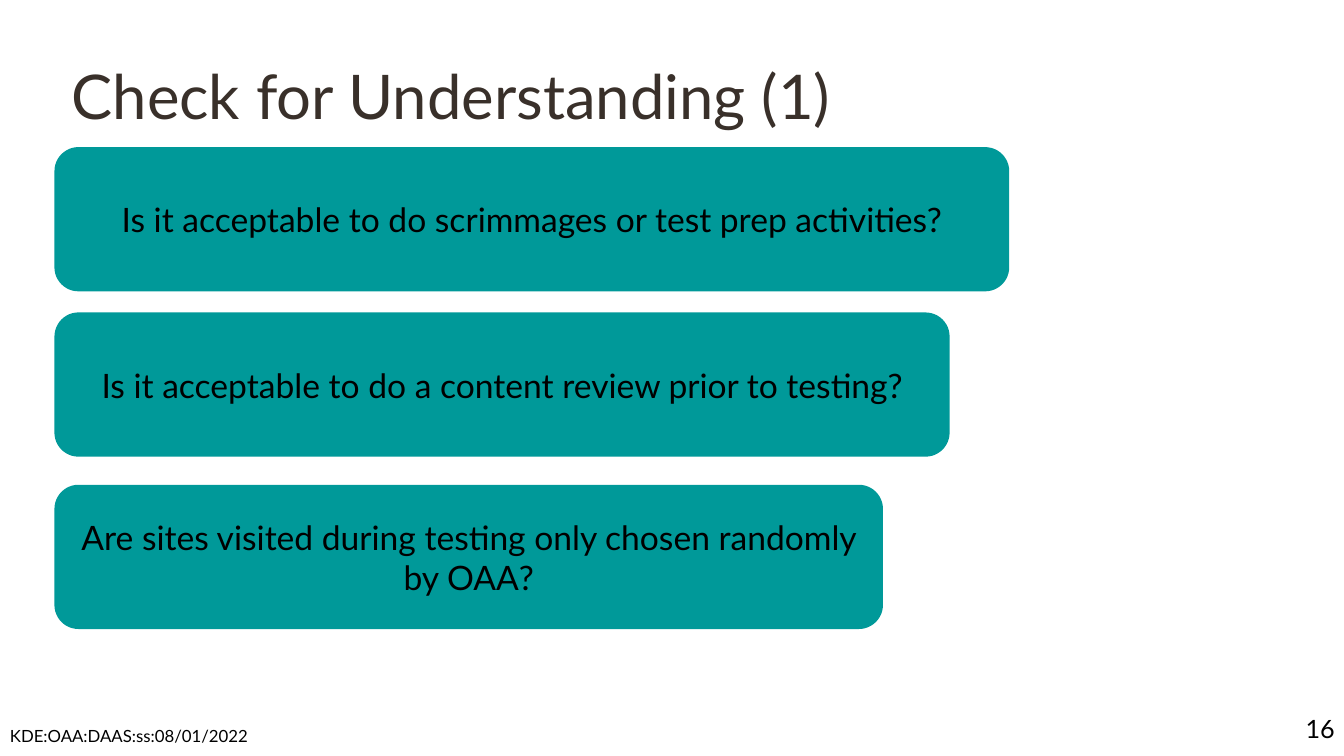
from pptx import Presentation
from pptx.dml.color import RGBColor
from pptx.enum import shapes, text
from pptx.util import Pt

TEAL = "009999"
BLACK = "000000"
BROWN = "39302A"
LEFT = 38.9
HIGH = 103
ASKS = [
    ("Is it acceptable to do scrimmages or test prep activities?", 105.1, 682),
    ("Is it acceptable to do a content review prior to testing?", 223.2, 639.4),
    ("Are sites visited during testing only chosen randomly by OAA?", 346.3, 591.8),
]


def tint(code):
    return RGBColor.from_string(code)


def write(shape, words, size, color=BLACK, align=text.PP_ALIGN.LEFT, space=1.0):
    frame = shape.text_frame
    frame.word_wrap = True
    frame.auto_size = text.MSO_AUTO_SIZE.NONE
    frame.vertical_anchor = text.MSO_ANCHOR.MIDDLE
    para = frame.paragraphs[0]
    para.alignment = align
    para.line_spacing = space
    run = para.add_run()
    run.text = words
    run.font.name = "Lato"
    run.font.size = Pt(size)
    run.font.color.rgb = tint(color)


def head(slide, words):
    title = slide.shapes.title
    title.left, title.top = Pt(43.9), Pt(19.4)
    title.width, title.height = Pt(676.8), Pt(103.7)
    write(title, words, 44, color=BROWN, space=0.9)


def card(slide, words, top, wide):
    box = slide.shapes.add_shape(
        shapes.MSO_SHAPE.ROUNDED_RECTANGLE, Pt(LEFT), Pt(top), Pt(wide), Pt(HIGH)
    )
    box.shadow.inherit = False
    box.fill.solid()
    box.fill.fore_color.rgb = tint(TEAL)
    box.line.fill.background()
    write(box, words, 24, align=text.PP_ALIGN.CENTER)


def label(slide, words, left, top, wide, **style):
    box = slide.shapes.add_textbox(Pt(left), Pt(top), Pt(wide), Pt(28.8))
    write(box, words, **style)


def main():
    deck = Presentation()
    deck.slide_width, deck.slide_height = Pt(960), Pt(540)
    slide = deck.slides.add_slide(deck.slide_layouts[5])
    head(slide, "Check for Understanding (1)")
    for words, top, wide in ASKS:
        card(slide, words, top, wide)
    label(slide, "KDE:OAA:DAAS:ss:08/01/2022", 0, 511.2, 200.2, size=12)
    label(slide, "16", 906.5, 506.2, 54, size=18, align=text.PP_ALIGN.RIGHT)
    deck.save("out.pptx")


if __name__ == "__main__":
    main()
